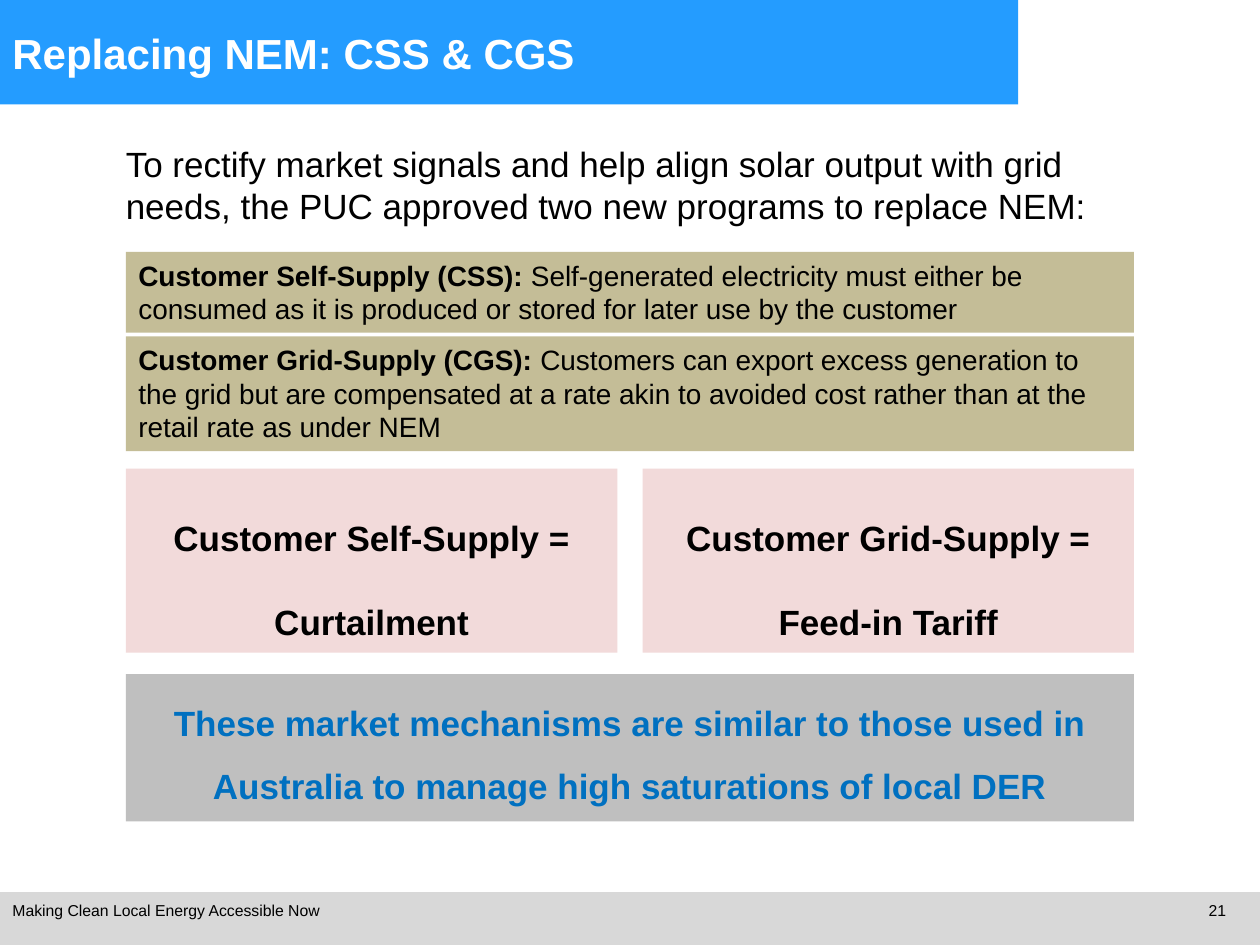
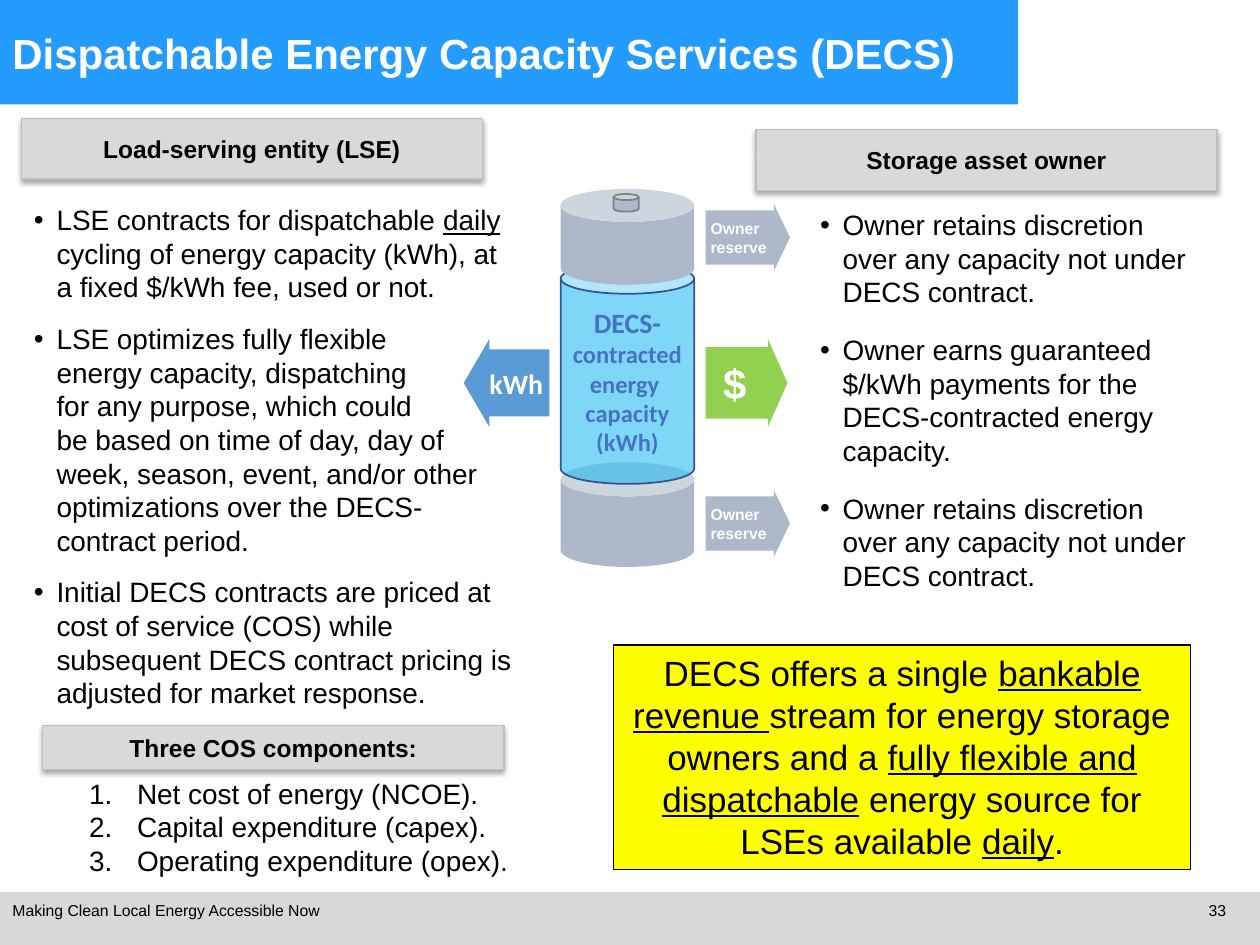
from lxml import etree
from pptx import Presentation
from pptx import util as u
from pptx.dml.color import RGBColor
from pptx.enum import shapes, text
from pptx.oxml import ns

COLORS = {
    "white": "FFFFFF", "black": "000000", "title": "249CFF", "footer": "D8D8D8",
    "program": "C4BD97", "outcome": "F2DADA", "conclusion": "BFBFBF", "accent": "0070C0",
    "heading": "D9D9D9", "heading_edge": "BFBFBF", "reserve": "ADB9CA", "terminal_edge": "808080",
    "payment": "92D050", "energy": "5B9BD5", "contracted": "00B0F0",
    "contracted_edge": "325491", "contracted_text": "4472C4", "callout": "FFFF00",
}
SHAPE = shapes.MSO_SHAPE
ALIGN = text.PP_ALIGN
MIDDLE = text.MSO_ANCHOR.MIDDLE
TAGLINE = "Making Clean Local Energy Accessible Now"
INSETS = (0.1, 0.05, 0.1, 0.05)


def color(name):
    return RGBColor.from_string(COLORS[name])


def add_xml(parent, tag, **attributes):
    return etree.SubElement(parent, ns.qn(tag), attributes)


def add_frame(element, insets=INSETS, anchor=text.MSO_ANCHOR.TOP):
    frame = element.text_frame
    frame.word_wrap = True
    frame.vertical_anchor = anchor
    (frame.margin_left, frame.margin_top,
     frame.margin_right, frame.margin_bottom) = map(u.Inches, insets)
    return frame


def write(frame, paragraphs, size, ink="black", bold=False, font="Arial", align=ALIGN.LEFT,
          spacing=None, gap=0, mark=None, indent=0, emphasis="underline"):
    """Fill a frame; text between underscores gets the emphasis, mark is a bullet element."""
    for number, content in enumerate(paragraphs):
        paragraph = frame.add_paragraph() if number else frame.paragraphs[0]
        paragraph.alignment = align
        if spacing:
            paragraph.line_spacing = spacing
        if number and gap:
            paragraph.space_before = u.Pt(gap)
        if mark:
            tag, attributes = mark
            properties = paragraph._p.get_or_add_pPr()
            properties.set("marL", str(u.Inches(indent)))
            properties.set("indent", str(-u.Inches(indent)))
            add_xml(properties, "a:buFont", typeface="Arial")
            add_xml(properties, tag, **attributes)
        paragraph.font.name = font
        paragraph.font.size = u.Pt(size)
        paragraph.font.bold = bold
        paragraph.font.color.rgb = color(ink)
        for part, words in enumerate(content.split("_")):
            for line_number, line in enumerate(words.split("\n")):
                if line_number:
                    paragraph.add_line_break()
                if line:
                    run = paragraph.add_run()
                    run.text = line
                    if part % 2:
                        setattr(run.font, emphasis, True)


def add_label(slide, box, paragraphs, size, insets=INSETS, anchor=text.MSO_ANCHOR.TOP, **style):
    label = slide.shapes.add_textbox(*map(u.Inches, box))
    write(add_frame(label, insets, anchor), paragraphs, size, **style)


def add_block(slide, box, fill, kind=SHAPE.RECTANGLE, adjustments=(), edge=None, width=0.75):
    block = slide.shapes.add_shape(kind, *map(u.Inches, box))
    block.shadow.inherit = False
    for position, value in enumerate(adjustments):
        block.adjustments[position] = value
    block.fill.solid()
    block.fill.fore_color.rgb = color(fill)
    if edge:
        block.line.color.rgb = color(edge)
        block.line.width = u.Pt(width)
    else:
        block.line.fill.background()
    return block


def add_panel(slide, box, fill, content, size, edge=None, **style):
    panel = add_block(slide, box, fill, edge=edge)
    write(add_frame(panel), [content], size, **style)


def add_heading(slide, box, content):
    """Grey heading with a soft shadow below it."""
    heading = add_block(slide, box, "heading", edge="heading_edge")
    effects = heading._element.spPr.find(ns.qn("a:effectLst"))
    shadow = add_xml(effects, "a:outerShdw", blurRad=str(u.Pt(3.1)), dist=str(u.Pt(1.8)),
                     dir="5400000", rotWithShape="0")
    shade = add_xml(shadow, "a:srgbClr", val=COLORS["black"])
    add_xml(shade, "a:alpha", val="35000")
    write(add_frame(heading, anchor=MIDDLE), [content], 14, bold=True, align=ALIGN.CENTER)


def add_arrow(slide, box, fill, content, size, insets, adjustments=(0.81, 0.24),
              kind=SHAPE.RIGHT_ARROW, **style):
    arrow = add_block(slide, box, fill, kind, adjustments)
    write(add_frame(arrow, insets, MIDDLE), [content], size, ink="white", bold=True, **style)


def add_bullets(slide, box, items, gap):
    add_label(slide, box, items, 16, gap=gap, mark=("a:buChar", {"char": "•"}), indent=0.18)


def add_battery(slide):
    left, width = 4.45, 1.06
    add_block(slide, (left, 3.67, width, 0.83), "reserve", SHAPE.CAN, [0.325])
    contracted = add_block(slide, (left, 2.09, width, 1.75), "contracted", SHAPE.CAN, [0.228],
                           edge="contracted_edge", width=1)
    tint = contracted._element.spPr.find(ns.qn("a:solidFill"))[0]
    add_xml(tint, "a:alpha", val="50000")
    frame = add_frame(contracted, (0, 0, 0, 0), MIDDLE)
    write(frame, ["DECS- contracted", "energy ", "capacity (kWh)"], 14, ink="contracted_text",
          bold=True, font="Calibri", align=ALIGN.CENTER)
    opening = frame.paragraphs[0]
    opening.runs[0].text = "DECS-"
    opening.runs[0].font.size = u.Pt(16)
    opening.add_run().text = " contracted"
    add_block(slide, (left, 1.5, width, 0.76), "reserve", SHAPE.CAN, [0.344])
    add_block(slide, (4.87, 1.54, 0.2, 0.14), "reserve", SHAPE.CAN, [0.344],
              edge="terminal_edge", width=1)


def add_page(deck, title, number):
    """Blank slide with the shared title band and footer."""
    slide = deck.slides.add_slide(deck.slide_layouts[6])
    add_block(slide, (0, 7.08, 10, 0.42), "footer")
    add_block(slide, (0, 0, 8.08, 0.83), "title")
    add_label(slide, (9.11, 7.1, 0.72, 0.4), [str(number)], 9, align=ALIGN.RIGHT)
    add_label(slide, (0, 7.1, 9.11, 0.25), [TAGLINE], 9)
    add_label(slide, (0, 0, 8, 0.83), [title], 24, anchor=MIDDLE, ink="white", bold=True)
    return slide


def build_programs(deck):
    slide = add_page(deck, "Replacing NEM: CSS & CGS", 21)
    add_label(slide, (0.9, 1.08, 8.2, 0.76),
              ["To rectify market signals and help align solar output with grid needs, "
               "the PUC approved two new programs to replace NEM:"], 20)
    programs = [
        (2, 0.64, "_Customer Self-Supply (CSS): _Self-generated electricity must either be "
                  "consumed as it is produced or stored for later use by the customer"),
        (2.67, 0.91, "_Customer Grid-Supply (CGS): _Customers can export excess generation to "
                     "the grid but are compensated at a rate akin to avoided cost rather than "
                     "at the retail rate as under NEM"),
    ]
    for top, height, definition in programs:
        add_panel(slide, (1, top, 8, height), "program", definition, 16, emphasis="bold")
    outcomes = ["Customer Self-Supply = Curtailment", "Customer Grid-Supply = Feed-in Tariff"]
    for column, outcome in enumerate(outcomes):
        add_panel(slide, (1 + 4.1 * column, 3.72, 3.9, 1.46), "outcome", outcome, 20,
                  bold=True, align=ALIGN.CENTER, spacing=2.0)
    add_panel(slide, (1, 5.35, 8, 1.17), "conclusion",
              "These market mechanisms are similar to those used in Australia to manage "
              "high saturations of local DER", 20,
              ink="accent", bold=True, align=ALIGN.CENTER, spacing=1.5)


def build_services(deck):
    slide = add_page(deck, "Dispatchable Energy Capacity Services (DECS)", 33)
    add_arrow(slide, (5.6, 2.69, 0.65, 0.7), "payment", "$", 24, (0, 0, 0.2, 0),
              align=ALIGN.RIGHT)
    add_battery(slide)
    add_arrow(slide, (3.68, 2.69, 0.68, 0.7), "energy", "kWh", 16, (0, 0.02, 0, 0.02),
              (0.76, 0.3), SHAPE.LEFT_ARROW, font="Calibri", align=ALIGN.CENTER)
    for top in (1.62, 3.89):
        add_arrow(slide, (5.6, top, 0.67, 0.53), "reserve", "Owner reserve", 9, (0.04, 0, 0, 0))

    add_bullets(slide, (0.17, 1.56, 4.02, 4.05), [
        "LSE contracts for dispatchable _daily_ cycling of energy capacity (kWh), "
        "at a fixed $/kWh fee, used or not.",
        "LSE optimizes fully flexible \nenergy capacity, dispatching \nfor any purpose, "
        "which could \nbe based on time of day, day of \nweek, season, event, and/or other "
        "optimizations over the DECS-contract period.",
        "Initial DECS contracts are priced at cost of service (COS) while subsequent "
        "DECS contract pricing is adjusted for market response.",
    ], gap=10.4)
    discretion = "Owner retains discretion over any capacity not under DECS contract."
    add_bullets(slide, (6.41, 1.6, 3.25, 3.2), [
        discretion,
        "Owner earns guaranteed $/kWh payments for the DECS-contracted energy capacity.",
        discretion,
    ], gap=13.8)

    add_heading(slide, (0.17, 0.94, 3.66, 0.48), "Load-serving entity (LSE)")
    add_heading(slide, (6, 1.03, 3.66, 0.48), "Storage asset owner")
    add_label(slide, (0.61, 6.11, 5.27, 0.91),
              ["Net cost of energy (NCOE).", "Capital expenditure (capex).",
               "Operating expenditure (opex)."], 16,
              mark=("a:buAutoNum", {"type": "arabicPeriod"}), indent=0.38)
    add_heading(slide, (0.34, 5.76, 3.66, 0.35), "Three COS components:")
    add_panel(slide, (4.87, 5.12, 4.58, 1.78), "callout",
              "DECS offers a single _bankable revenue _stream for energy storage owners and a "
              "_fully flexible and dispatchable_ energy source for LSEs available _daily_.",
              20, edge="black", align=ALIGN.CENTER)


def main():
    deck = Presentation()
    deck.slide_width, deck.slide_height = u.Inches(10), u.Inches(7.5)
    build_programs(deck)
    build_services(deck)
    deck.save("out.pptx")


if __name__ == "__main__":
    main()
